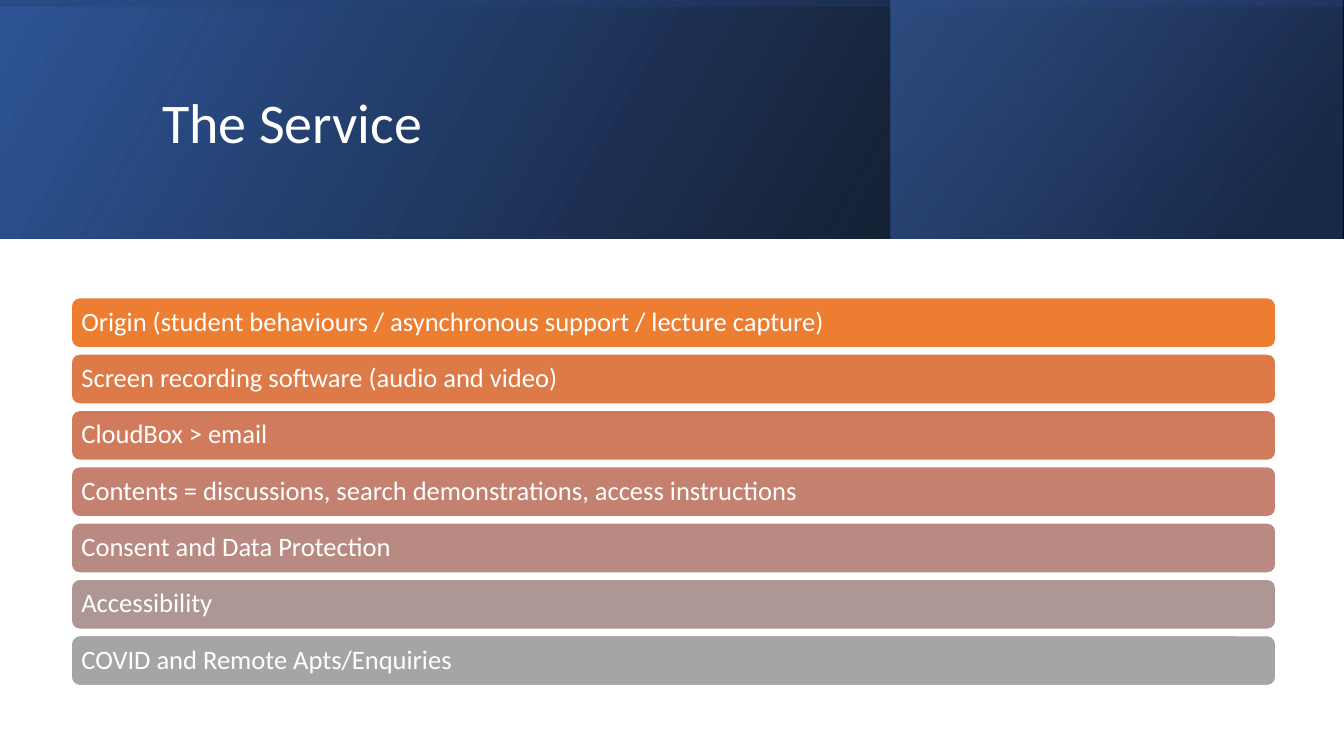
"""Build the slide 'The Service': a gradient banner above seven stacked bars."""
from lxml import etree
from pptx import Presentation
from pptx.dml.color import RGBColor
from pptx.enum import shapes, text
from pptx.oxml import ns
from pptx.util import Pt

COLORS = {"white": "FFFFFF", "black": "000000", "blue": "2F5597",
          "navy": "203864", "sky": "4472C4"}
FONT = "Calibri"
SLIDE_W, SLIDE_H, BANNER_H = 960, 540, 170.64
TITLE = "The Service"
TITLE_BOX = (108.72, 27.36, 765.36, 123.84)
BARS = [
    ("Origin (student behaviours / asynchronous support / lecture capture)", "ED7D31"),
    ("Screen recording software (audio and video)", "DE7A47"),
    ("CloudBox > email", "D17B5C"),
    ("Contents = discussions, search demonstrations, access instructions", "C48170"),
    ("Consent and Data Protection", "B98A82"),
    ("Accessibility", "AE9694"),
    ("COVID and Remote Apts/Enquiries", "A5A5A5"),
]
BAR_X, BAR_Y, BAR_W, BAR_H, BAR_PITCH = 50.9, 212.6, 860.4, 35.8, 40.23
BANNER = [
    ((0, 0, SLIDE_W, BANNER_H), 0, 330, [(0, "black", 96), (100, "blue", 100)]),
    ((636.1, 0, 323, BANNER_H), 0, 320, [(19, "navy", 68), (100, "sky", 48)]),
    (((SLIDE_W - BANNER_H) / 2, (BANNER_H - SLIDE_W) / 2, BANNER_H, SLIDE_W),
     270, 350, [(23, "blue", 16), (99, "black", 45)]),
]


def add_shape(slide, kind, box):
    sp = slide.shapes.add_shape(kind, *map(Pt, box))
    sp.shadow.inherit = False
    return sp


def set_gradient(sp, angle, stops):
    sp.fill.background()
    old = sp._element.spPr.find(ns.qn("a:noFill"))
    grad = etree.Element(ns.qn("a:gradFill"), rotWithShape="1")
    stop_list = etree.SubElement(grad, ns.qn("a:gsLst"))
    for pos, color, alpha in stops:
        gs = etree.SubElement(stop_list, ns.qn("a:gs"), pos=str(pos * 1000))
        clr = etree.SubElement(gs, ns.qn("a:srgbClr"), val=COLORS[color])
        etree.SubElement(clr, ns.qn("a:alpha"), val=str(alpha * 1000))
    etree.SubElement(grad, ns.qn("a:lin"), ang=str(angle * 60000), scaled="0")
    old.getparent().replace(old, grad)


def write(sp, words, size, inset_x, inset_y):
    tf = sp.text_frame
    tf.word_wrap = True
    tf.vertical_anchor = text.MSO_ANCHOR.MIDDLE
    tf.margin_left = tf.margin_right = Pt(inset_x)
    tf.margin_top = tf.margin_bottom = Pt(inset_y)
    p = tf.paragraphs[0]
    p.text = words
    p.alignment = text.PP_ALIGN.LEFT
    p.line_spacing = 0.9
    p.font.name, p.font.size = FONT, Pt(size)
    p.font.color.rgb = RGBColor.from_string(COLORS["white"])


def main():
    prs = Presentation()
    prs.slide_width, prs.slide_height = Pt(SLIDE_W), Pt(SLIDE_H)
    slide = prs.slides.add_slide(prs.slide_layouts[6])

    for box, rotation, angle, stops in BANNER:
        sp = add_shape(slide, shapes.MSO_SHAPE.RECTANGLE, box)
        sp.rotation = rotation
        sp._element.spPr.find(ns.qn("a:xfrm")).set("flipH", "1")
        sp.line.fill.background()
        set_gradient(sp, angle, stops)

    write(slide.shapes.add_textbox(*map(Pt, TITLE_BOX)), TITLE, 40, 7.2, 3.6)

    for i, (words, color) in enumerate(BARS):
        box = (BAR_X, BAR_Y + i * BAR_PITCH, BAR_W, BAR_H)
        sp = add_shape(slide, shapes.MSO_SHAPE.ROUNDED_RECTANGLE, box)
        sp.fill.solid()
        sp.fill.fore_color.rgb = RGBColor.from_string(color)
        sp.line.color.rgb = RGBColor.from_string(COLORS["white"])
        sp.line.width = Pt(1)
        write(sp, words, 19, 5.5, 5.5)

    prs.save("out.pptx")


if __name__ == "__main__":
    main()
